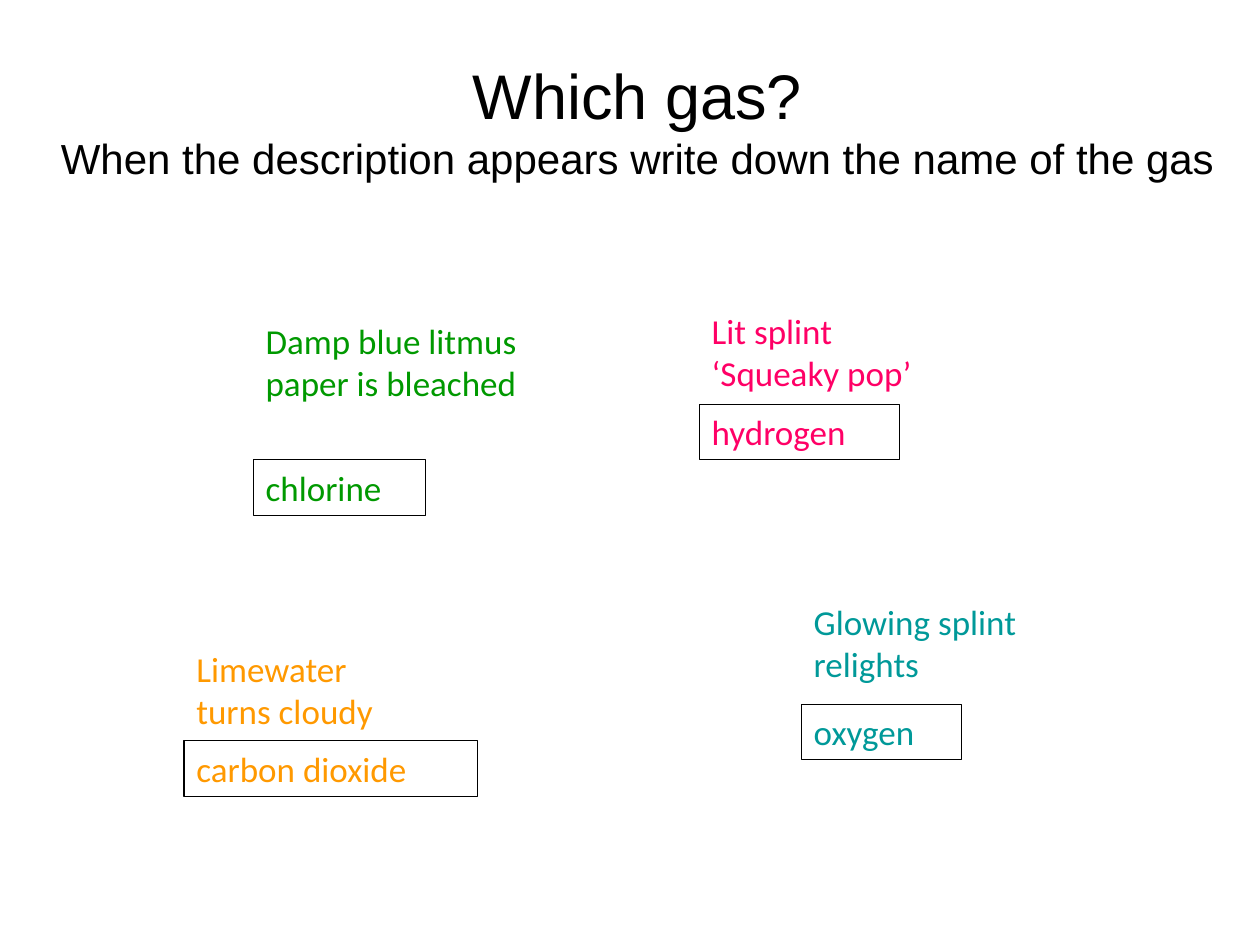
from dataclasses import dataclass

from pptx import Presentation
from pptx.dml.color import RGBColor
from pptx.enum.shapes import MSO_SHAPE
from pptx.enum.text import MSO_ANCHOR, PP_ALIGN
from pptx.util import Inches, Pt

RECTANGLE = MSO_SHAPE.RECTANGLE
TOP, MIDDLE = MSO_ANCHOR.TOP, MSO_ANCHOR.MIDDLE
LEFT, CENTER = PP_ALIGN.LEFT, PP_ALIGN.CENTER


@dataclass(frozen=True)
class Theme:
    title_font: str = "Arial"
    body_font: str = "Calibri"
    title_size: int = 36
    subtitle_size: int = 24
    body_size: int = 20
    line_width: float = 0.75
    black: str = "000000"
    green: str = "009900"
    pink: str = "FF0066"
    teal: str = "009999"
    orange: str = "FF9900"


class SlideBuilder:
    def __init__(self, slide, theme):
        self.slide = slide
        self.theme = theme

    def run(self, p, text, font, size, color):
        r = p.add_run()
        r.text = text
        r.font.name = font
        r.font.size = Pt(size)
        r.font.color.rgb = RGBColor.from_string(color)

    def body_text(self, sp, lines, color):
        tf = sp.text_frame
        tf.word_wrap = True
        tf.vertical_anchor = TOP
        for i, line in enumerate(lines):
            p = tf.add_paragraph() if i else tf.paragraphs[0]
            p.alignment = LEFT
            self.run(p, line, self.theme.body_font, self.theme.body_size, color)

    def title(self, box, heading, instruction):
        t = self.theme
        tf = self.slide.shapes.add_textbox(*map(Inches, box)).text_frame
        tf.word_wrap = True
        tf.vertical_anchor = MIDDLE
        p = tf.paragraphs[0]
        p.alignment = CENTER
        self.run(p, heading, t.title_font, t.title_size, t.black)
        p.add_line_break()
        self.run(p, instruction, t.title_font, t.subtitle_size, t.black)

    def description(self, box, lines, color):
        sp = self.slide.shapes.add_textbox(*map(Inches, box))
        self.body_text(sp, lines, color)

    def answer(self, box, gas, color):
        sp = self.slide.shapes.add_shape(RECTANGLE, *map(Inches, box))
        sp.shadow.inherit = False
        sp.fill.background()
        sp.line.color.rgb = RGBColor.from_string(self.theme.black)
        sp.line.width = Pt(self.theme.line_width)
        self.body_text(sp, [gas], color)


def main():
    theme = Theme()
    prs = Presentation()
    prs.slide_width, prs.slide_height = Inches(10), Inches(7.5)
    s = SlideBuilder(prs.slides.add_slide(prs.slide_layouts[6]), theme)

    s.title((0.31, 0.28, 9.5, 1.34), "Which gas?",
            "When the description appears write down the name of the gas")

    # left, description (top, width, height, lines), answer (top, width, gas), color
    gases = [
        (2.01, (2.49, 2.2, 1.11, ["Damp blue litmus paper is bleached"]),
         (3.65, 1.37, "chlorine"), theme.green),
        (5.55, (2.41, 2.21, 0.77, ["Lit splint", "‘Squeaky pop’"]),
         (3.21, 1.59, "hydrogen"), theme.pink),
        (6.36, (4.72, 2.26, 0.77, ["Glowing splint", "relights"]),
         (5.59, 1.27, "oxygen"), theme.teal),
        (1.46, (5.09, 1.95, 0.77, ["Limewater", "turns cloudy"]),
         (5.88, 2.33, "carbon dioxide"), theme.orange),
    ]
    answer_height = 0.44
    for left, (top, width, height, lines), _, color in gases:
        s.description((left, top, width, height), lines, color)
    for left, _, (top, width, gas), color in gases:
        s.answer((left, top, width, answer_height), gas, color)

    prs.save("out.pptx")


if __name__ == "__main__":
    main()
